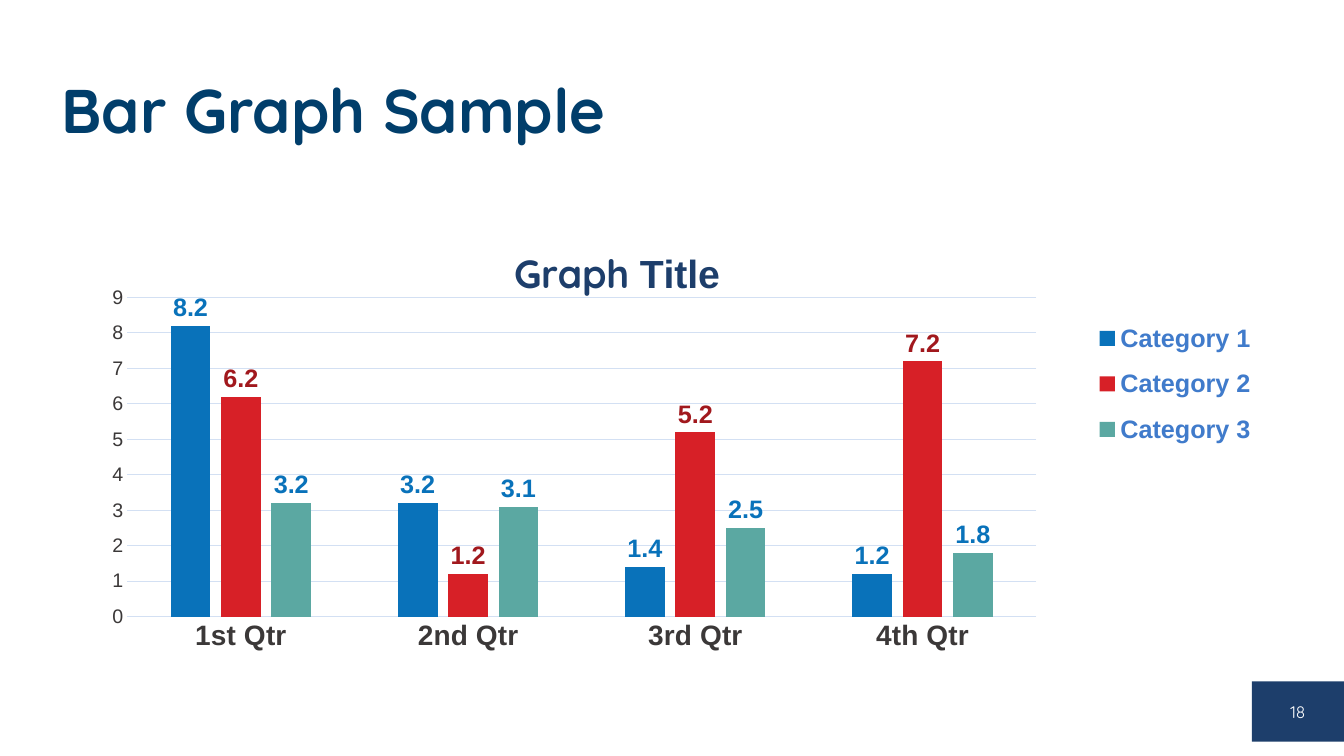
from lxml.etree import SubElement
from pptx import Presentation
from pptx.chart.data import CategoryChartData
from pptx.dml.color import RGBColor
from pptx.enum.chart import XL_CHART_TYPE, XL_LABEL_POSITION, XL_LEGEND_POSITION, XL_TICK_MARK
from pptx.enum.shapes import MSO_SHAPE
from pptx.enum.text import MSO_ANCHOR, PP_ALIGN
from pptx.oxml import parse_xml
from pptx.oxml.ns import nsdecls, qn
from pptx.util import Cm, Pt

COLOURS = {
    "heading": "013E6B", "navy": "1D3E6B", "white": "FFFFFF", "axis": "3B3838",
    "grid": "D3E0F3", "legend": "407BCB", "blue": "0972BA", "red": "D72027",
    "dark red": "A1181D", "teal": "5BA8A2",
}
HEADING = "Bar Graph Sample"
PAGE_NUMBER = "18"
CHART_TITLE = [("Graph ", "Quicksand"), ("Title", "Arial")]
QUARTERS = ["1st Qtr", "2nd Qtr", "3rd Qtr", "4th Qtr"]
SERIES = [  # name, values, bar colour, label colour
    ("Category 1", (8.2, 3.2, 1.4, 1.2), "blue", "blue"),
    ("Category 2", (6.2, 1.2, 5.2, 7.2), "red", "dark red"),
    ("Category 3", (3.2, 3.1, 2.5, 1.8), "teal", "blue"),
]
# Left, top, width and height in centimetres
HEADING_AREA = (1.3, 1.02, 31.29, 3.68)
CHART_AREA = (1.3, 5.08, 31.29, 12.09)
NUMBER_AREA = (31.55, 17.17, 2.32, 1.52)


def colour(name):
    return RGBColor.from_string(COLOURS[name])


def set_font(font, size, color, bold=False, name="Arial"):
    font.size, font.bold, font.name = Pt(size), bold, name
    font.color.rgb = colour(color)


def write(frame, text, align=PP_ALIGN.LEFT, spacing=1.0, **font):
    frame.word_wrap = True
    frame.vertical_anchor = MSO_ANCHOR.MIDDLE
    para = frame.paragraphs[0]
    para.alignment, para.line_spacing = align, spacing
    span = para.add_run()
    span.text = text
    set_font(span.font, **font)


def place(part, index, inner=False, **fractions):
    """Put a chart part at fractions of the chart area; index is the layout's child position."""
    for old in part.findall(qn("c:layout")):
        part.remove(old)
    layout = parse_xml(f"<c:layout {nsdecls('c')}/>")
    manual = SubElement(layout, qn("c:manualLayout"))
    if inner:
        SubElement(manual, qn("c:layoutTarget")).set("val", "inner")
    for key in ("x", "y"):
        SubElement(manual, qn(f"c:{key}Mode")).set("val", "edge")
    for key, value in fractions.items():
        SubElement(manual, qn(f"c:{key}")).set("val", str(value))
    part.insert(index, layout)


def style_axes(chart):
    quarters, values = chart.category_axis, chart.value_axis
    for axis, size, bold in ((quarters, 20, True), (values, 14, False)):
        axis.major_tick_mark = axis.minor_tick_mark = XL_TICK_MARK.NONE
        set_font(axis.tick_labels.font, size, "axis", bold)
    values.minimum_scale, values.maximum_scale, values.major_unit = 0, 9, 1
    values.format.line.fill.background()
    for line in (quarters.format.line, values.major_gridlines.format.line):
        line.color.rgb = colour("grid")
        line.width = Pt(0.75)


def style_bars(plot):
    plot.gap_width, plot.overlap, plot.vary_by_categories = 219, -27, False
    for series, (_, _, bar, label) in zip(plot.series, SERIES):
        series.format.fill.solid()
        series.format.fill.fore_color.rgb = colour(bar)
        series.invert_if_negative = False
        labels = series.data_labels
        labels.show_value = True
        labels.position = XL_LABEL_POSITION.OUTSIDE_END
        set_font(labels.font, 18, label, True)


def add_graph(page):
    data = CategoryChartData()
    data.categories = QUARTERS
    for name, values, *_ in SERIES:
        data.add_series(name, values)
    chart = page.shapes.add_chart(
        XL_CHART_TYPE.COLUMN_CLUSTERED, *map(Cm, CHART_AREA), data).chart
    set_font(chart.font, 10, "navy")
    style_axes(chart)
    style_bars(chart.plots[0])

    chart.has_title = True
    para = chart.chart_title.text_frame.paragraphs[0]
    for text, typeface in CHART_TITLE:
        span = para.add_run()
        span.text = text
        set_font(span.font, 28, "navy", True, typeface)
    chart.chart_title.include_in_layout = False

    chart.has_legend = True
    chart.legend.position = XL_LEGEND_POSITION.RIGHT
    chart.legend.include_in_layout = False
    set_font(chart.legend.font, 18, "legend", True)

    part = chart.element.find(qn("c:chart")).find
    place(part(qn("c:title")), 1, x=0.37, y=0.09)
    place(part(qn("c:plotArea")), 0, True, x=0.061, y=0.2, w=0.732, h=0.665)
    place(part(qn("c:legend")), 1, x=0.835, y=0.22, w=0.14, h=0.32)


def main():
    deck = Presentation()
    deck.slide_width, deck.slide_height = Cm(33.87), Cm(19.05)
    page = deck.slides.add_slide(deck.slide_layouts[6])

    heading = page.shapes.add_textbox(*map(Cm, HEADING_AREA))
    write(heading.text_frame, HEADING, spacing=0.9,
          size=44, color="heading", bold=True, name="Quicksand")

    number = page.shapes.add_shape(MSO_SHAPE.RECTANGLE, *map(Cm, NUMBER_AREA))
    number.shadow.inherit = False
    number.fill.solid()
    number.fill.fore_color.rgb = colour("navy")
    number.line.fill.background()
    write(number.text_frame, PAGE_NUMBER, align=PP_ALIGN.CENTER,
          size=12, color="white", name="Quicksand")

    add_graph(page)
    deck.save("out.pptx")


if __name__ == "__main__":
    main()
